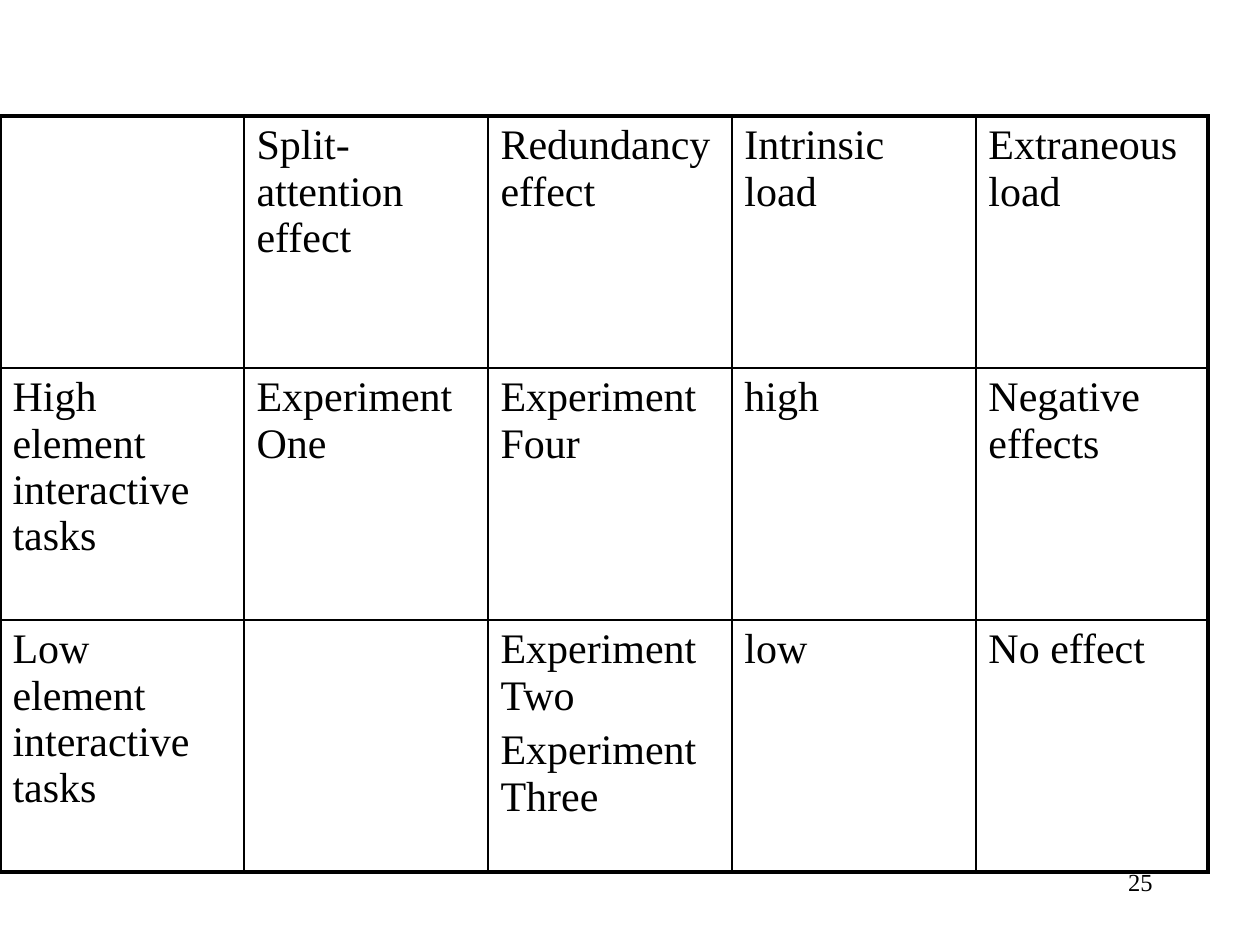
from typing import NamedTuple

from lxml import etree
from pptx import Presentation
from pptx.dml.color import RGBColor
from pptx.enum.text import PP_ALIGN
from pptx.oxml.ns import qn
from pptx.util import Emu, Pt

EMU_PER_INCH = 914400
PX_PER_INCH = 126
BLACK = RGBColor(0, 0, 0)
FONT_NAME = "Times New Roman"
RIGHT = PP_ALIGN.RIGHT
THIN = Pt(1)
THICK = Pt(2.25)
PARAGRAPH_GAP = Pt(4.8)

COLUMN_WIDTHS = [244, 244, 244, 244, 232]
ROW_HEIGHT = 252


class Box(NamedTuple):
    left: int
    top: int
    width: int
    height: int


class Row(NamedTuple):
    """Each cell holds a tuple of paragraphs."""
    task: tuple
    split_attention: tuple
    redundancy: tuple
    intrinsic_load: tuple
    extraneous_load: tuple


ROWS = [
    Row((), ("Split-attention effect",), ("Redundancy effect",),
        ("Intrinsic load",), ("Extraneous load",)),
    Row(("High element interactive tasks",), ("Experiment One",),
        ("Experiment Four",), ("high",), ("Negative effects",)),
    Row(("Low element interactive tasks",), (),
        ("Experiment Two", "Experiment Three"), ("low",), ("No effect",)),
]
TABLE_BOX = Box(0, 116, sum(COLUMN_WIDTHS), ROW_HEIGHT * len(ROWS))
NUMBER_BOX = Box(903, 861, 262, 63)


def px(length: int) -> Emu:
    return Emu(round(length * EMU_PER_INCH / PX_PER_INCH))


def add_run(paragraph, text: str, size: int) -> None:
    run = paragraph.add_run()
    run.text = text
    run.font.color.rgb = BLACK
    for name, value in {"name": FONT_NAME, "size": Pt(size)}.items():
        setattr(run.font, name, value)


def set_borders(cell, widths: dict[str, Emu]) -> None:
    """Draw solid borders; the keys are the sides L, R, T and B in schema order."""
    properties = cell._tc.get_or_add_tcPr()
    for side, width in widths.items():
        line = etree.SubElement(properties, qn(f"a:ln{side}"), w=str(int(width)))
        fill = etree.SubElement(line, qn("a:solidFill"))
        etree.SubElement(fill, qn("a:srgbClr"), val=str(BLACK))


def fill_cell(cell, paragraphs: tuple) -> None:
    for index, text in enumerate(paragraphs):
        if index == 0:
            paragraph = cell.text_frame.paragraphs[0]
        else:
            paragraph = cell.text_frame.add_paragraph()
            paragraph.space_before = PARAGRAPH_GAP
        add_run(paragraph, text, 24)


def add_effects_table(slide, box: Box, rows: list[Row]) -> None:
    last_row, last_column = len(rows) - 1, len(COLUMN_WIDTHS) - 1
    table = slide.shapes.add_table(
        len(rows), len(COLUMN_WIDTHS), *map(px, box)).table
    table.first_row = table.horz_banding = False
    for column, width in zip(table.columns, COLUMN_WIDTHS):
        column.width = px(width)
    for row_index, row in enumerate(rows):
        table.rows[row_index].height = px(ROW_HEIGHT)
        for column_index, paragraphs in enumerate(row):
            cell = table.cell(row_index, column_index)
            outer_sides = {
                "L": column_index == 0,
                "R": column_index == last_column,
                "T": row_index == 0,
                "B": row_index == last_row,
            }
            set_borders(cell, {side: THICK if outer else THIN
                               for side, outer in outer_sides.items()})
            cell.fill.background()
            fill_cell(cell, paragraphs)


def add_slide_number(slide, box: Box, number: str) -> None:
    text_frame = slide.shapes.add_textbox(*map(px, box)).text_frame
    text_frame.word_wrap = True
    paragraph = text_frame.paragraphs[0]
    paragraph.alignment = RIGHT
    add_run(paragraph, number, 14)


def main() -> None:
    presentation = Presentation()
    presentation.slide_width = px(1260)
    presentation.slide_height = px(945)
    slide = presentation.slides.add_slide(presentation.slide_layouts[6])
    add_slide_number(slide, NUMBER_BOX, "25")
    add_effects_table(slide, TABLE_BOX, ROWS)
    presentation.save("out.pptx")


if __name__ == "__main__":
    main()
